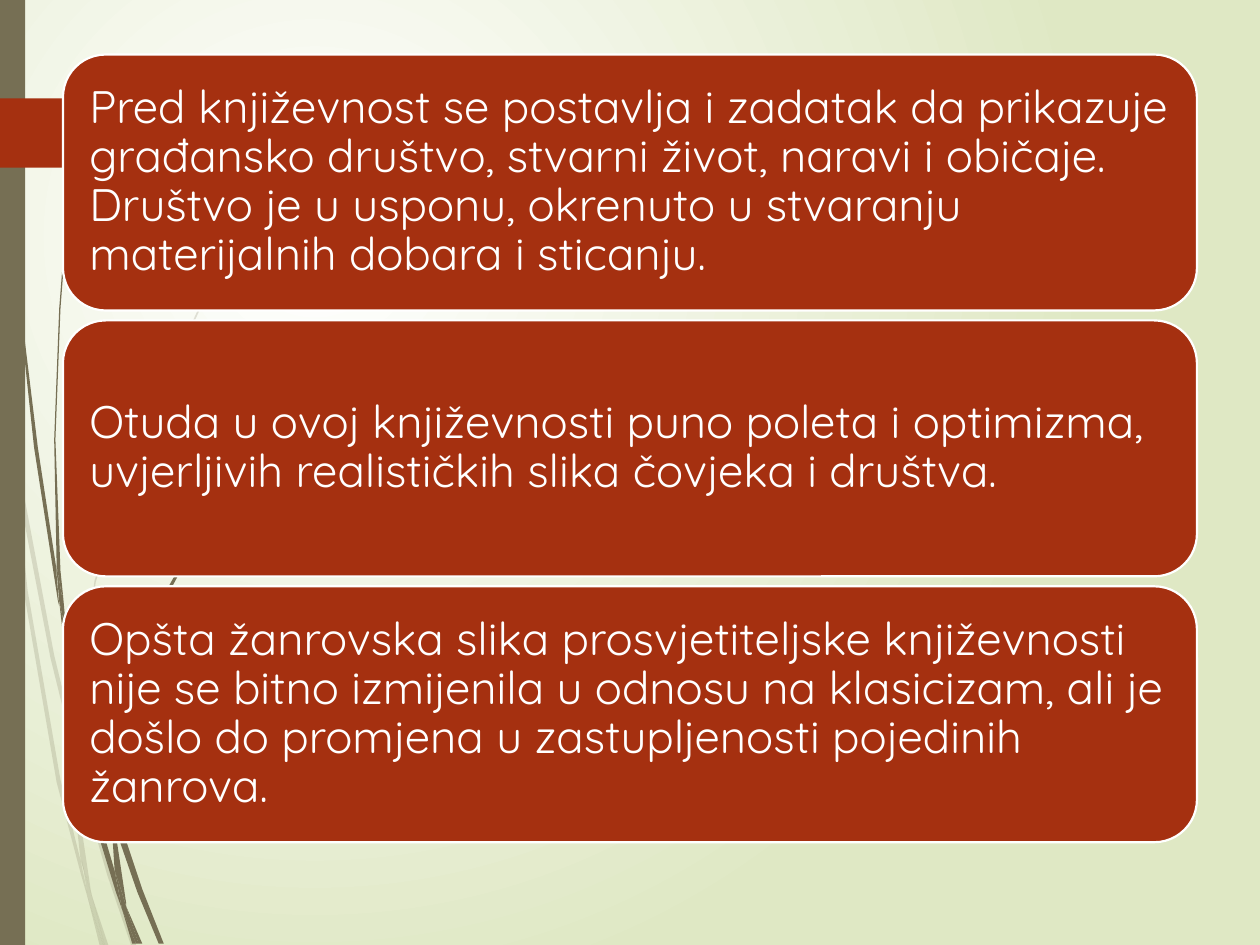
from lxml.etree import SubElement
from pptx import Presentation
from pptx.dml.color import RGBColor
from pptx.enum.shapes import MSO_SHAPE
from pptx.enum.text import MSO_ANCHOR, PP_ALIGN
from pptx.oxml.ns import qn
from pptx.util import Cm, Pt

WHITE = RGBColor(0xFF, 0xFF, 0xFF)
PALE = RGBColor(0xDF, 0xE8, 0xC4)
OLIVE = RGBColor(0x76, 0x6F, 0x54)
RUST = RGBColor(0xA5, 0x30, 0x10)

FAINT_WISPS = [
    [(0.4, 5.22), (0.59, 5.99), (0.59, 5.86), (0.43, 5.2), (0.1, 3.45), (0.12, 3.76)],
    [(0.64, 6.07), (0.61, 5.96), (0.61, 6.1), (0.85, 6.94), (1.04, 7.5), (1.08, 7.5), (0.88, 6.92)],
    [(0.83, 7.5), (0.86, 7.5), (0.73, 7.11)],
    [(0.64, 6.83), (0.48, 6.19), (0.22, 4.69), (0.12, 3.76), (0.08, 3.5), (0.19, 4.7),
     (0.45, 6.21), (0.64, 6.93), (0.7, 7.14), (0.69, 7.07)],
    [(0.58, 5.99), (0.6, 6.46), (0.64, 6.83), (0.67, 6.92), (0.73, 7.11), (0.72, 7.06),
     (0.63, 6.46), (0.61, 6.1), (0.61, 6.08)],
    [(0.61, 5.84), (0.76, 4.62), (1.11, 3.49), (1.59, 2.45), (1.87, 1.98), (2.01, 1.75),
     (2.17, 1.54), (2.17, 1.53), (2.01, 1.75), (1.86, 1.97), (1.58, 2.44), (1.1, 3.48),
     (0.75, 4.61), (0.59, 5.84), (0.59, 5.86), (0.61, 5.96)],
    [(0.7, 7.14), (0.79, 7.5), (0.82, 7.5)],
    [(0.67, 6.92), (0.65, 6.83), (0.69, 7.07), (0.7, 7.14), (0.82, 7.5), (0.83, 7.5), (0.73, 7.11)],
]
DARK_WISPS = [
    [(0.05, 1.1), (0.14, 2.33), (0.27, 3.55), (0.46, 4.77), (0.47, 4.81), (0.45, 4.57),
     (0.45, 4.53), (0.3, 3.55), (0.15, 2.32), (0.06, 1.09), (0.04, 0.48), (0.03, 0),
     (0.02, 0), (0.03, 0.48)],
    [(0.94, 6.49), (0.91, 6.41), (0.91, 6.56), (1.09, 7.08), (1.26, 7.49), (1.3, 7.49), (1.13, 7.06)],
    [(0.91, 6.91), (0.81, 6.57), (0.6, 5.56), (0.53, 5.05), (0.47, 4.77), (0.56, 5.57),
     (0.77, 6.59), (0.92, 7.08), (0.97, 7.22), (0.96, 7.17)],
    [(0.5, 4.72), (0.48, 4.53), (0.44, 3.49), (0.48, 2.45), (0.52, 1.93), (0.58, 1.41),
     (0.51, 1.93), (0.47, 2.45), (0.43, 3.49), (0.45, 4.49), (0.49, 4.72)],
    [(1.1, 7.49), (1.13, 7.49), (1, 7.19)],
    [(0.47, 4.77), (0.53, 5.05), (0.5, 4.72), (0.49, 4.72), (0.45, 4.49), (0.45, 4.53)],
    [(0.91, 6.33), (1.03, 5.52), (1.31, 4.76), (1.69, 4.06), (1.91, 3.74), (2.03, 3.59),
     (2.16, 3.44), (2.15, 3.44), (2.03, 3.58), (1.91, 3.73), (1.68, 4.05), (1.29, 4.74),
     (1.01, 5.51), (0.88, 6.31), (0.91, 6.41)],
    [(0.97, 7.22), (1.05, 7.49), (1.08, 7.49)],
    [(0.88, 6.45), (0.91, 6.91), (0.96, 7.06), (1, 7.19), (1, 7.16), (0.91, 6.56), (0.9, 6.51)],
    [(0.96, 7.06), (0.91, 6.91), (0.96, 7.17), (0.97, 7.22), (1.08, 7.49), (1.1, 7.49), (1, 7.19)],
]
ARROW = [(0, 0.78), (1.21, 0.78), (1.24, 0.79), (1.49, 1.04), (1.5, 1.06),
         (1.49, 1.07), (1.24, 1.32), (1.21, 1.33), (0, 1.33)]
TEXTS = [
    "Pred književnost se postavlja i zadatak da prikazuje građansko društvo, stvarni život, "
    "naravi i običaje. Društvo je u usponu, okrenuto u stvaranju materijalnih dobara i sticanju.",
    "Otuda u ovoj književnosti puno poleta i optimizma, uvjerljivih realističkih slika "
    "čovjeka i društva.",
    "Opšta žanrovska slika prosvjetiteljske književnosti nije se bitno izmijenila u odnosu na "
    "klasicizam, ali je došlo do promjena u zastupljenosti pojedinih žanrova.",
]
FRAME = {"word_wrap": True, "vertical_anchor": MSO_ANCHOR.MIDDLE,
         "margin_left": Cm(0.28), "margin_right": Cm(0.28),
         "margin_top": Cm(0.28), "margin_bottom": Cm(0.28)}
FONT = {"name": "Quicksand", "size": Pt(26)}


def paint(sp, color):
    sp.shadow.inherit = False
    sp.fill.solid()
    sp.fill.fore_color.rgb = color
    sp.line.fill.background()


def outline(s, points, color):
    start, *rest = [(Cm(2.54 * x), Cm(2.54 * y)) for x, y in points]
    fb = s.shapes.build_freeform(*start)
    fb.add_line_segments(rest, close=True)
    sp = fb.convert_to_shape()
    paint(sp, color)
    return sp


prs = Presentation()
prs.slide_width, prs.slide_height = Cm(25.4), Cm(19.05)
s = prs.slides.add_slide(prs.slide_layouts[6])

fill = s.background.fill
fill.gradient()
for stop, color, position in zip(fill.gradient_stops, (WHITE, PALE), (0, 1)):
    stop.color.rgb = color
    stop.position = position
grad = s.background._cSld.find(".//" + qn("a:gradFill"))
grad.remove(grad.find(qn("a:lin")))
circle = SubElement(grad, qn("a:path"), path="circle")
SubElement(circle, qn("a:fillToRect"), l="50000", t="50000", r="100000", b="100000")

for points in FAINT_WISPS:
    sp = outline(s, points, OLIVE)
    SubElement(sp._element.spPr.find(".//" + qn("a:srgbClr")), qn("a:alpha"), val="20000")
for points in DARK_WISPS:
    outline(s, points, OLIVE)

sp = s.shapes.add_shape(MSO_SHAPE.RECTANGLE, 0, 0, Cm(0.51), prs.slide_height)
paint(sp, OLIVE)
outline(s, ARROW, RUST)

for i, text in enumerate(TEXTS):
    sp = s.shapes.add_shape(MSO_SHAPE.ROUNDED_RECTANGLE,
                            Cm(1.27), Cm(1.1 + 5.36 * i), Cm(22.86), Cm(5.16))
    paint(sp, RUST)
    sp.line.color.rgb = WHITE
    sp.line.width = Pt(1.25)
    tf = sp.text_frame
    for name, value in FRAME.items():
        setattr(tf, name, value)
    p = tf.paragraphs[0]
    p.alignment = PP_ALIGN.LEFT
    p.line_spacing = 0.9
    r = p.add_run()
    r.text = text
    for name, value in FONT.items():
        setattr(r.font, name, value)
    r.font.color.rgb = WHITE

prs.save("out.pptx")
